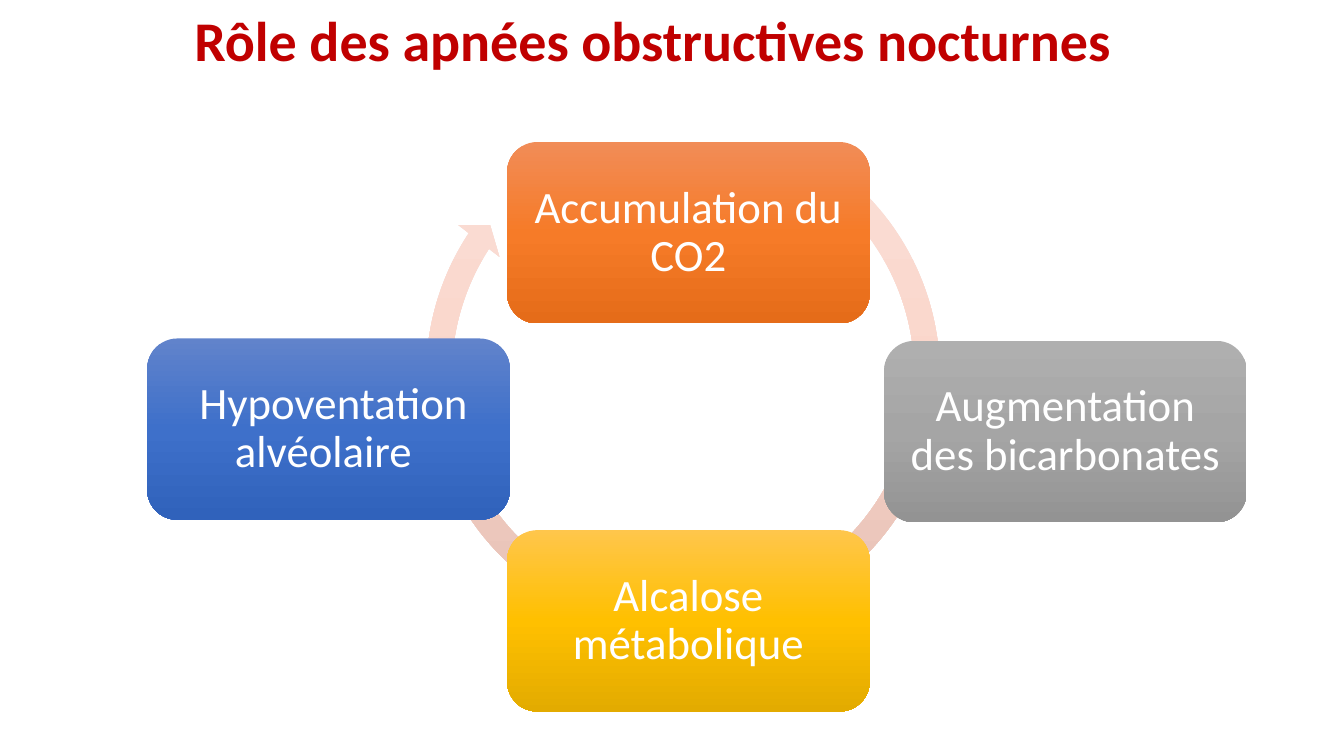
import copy

from pptx import Presentation
from pptx import util as u
from pptx.dml.color import RGBColor
from pptx.enum import shapes, text
from pptx.oxml.ns import qn

FONT = "Calibri"
COLORS = {
    "title": "C00000",
    "label": "FFFFFF",
    "arrow": ("FAE0D8", "FAD6CB", "E2BCB1"),
    "orange": ("F18C57", "F67B28", "E56C19"),
    "grey": ("AFAFAF", "A5A5A5", "939393"),
    "yellow": ("FFC64B", "FFC000", "E3AB00"),
    "blue": ("6183CB", "3E70CA", "3062BB"),
}
CARD_WIDTH, CARD_HEIGHT = 9.14, 4.57

# Label, colour, and offset in cm from the corner of the cycle's box
STAGES = [
    ("Accumulation du CO2", "orange", 9.07, 0),
    ("Augmentation des bicarbonates", "grey", 18.57, 5.01),
    ("Alcalose métabolique", "yellow", 9.07, 9.78),
    (" Hypoventation alvéolaire ", "blue", 0, 4.95),
]


def format_text(paragraph, size, color, bold=False):
    for run in paragraph.runs:
        run.font.name = FONT
        run.font.size = u.Pt(size)
        run.font.bold = bold
        run.font.color.rgb = RGBColor.from_string(color)


def shade(shape, colors):
    """Fill from top to bottom with three evenly spaced colours."""
    shape.shadow.inherit = False
    shape.line.fill.background()
    shape.fill.gradient()
    shape.fill.gradient_angle = 270
    stop_list = shape._element.spPr.find(qn("a:gradFill")).find(qn("a:gsLst"))
    stop_list.append(copy.deepcopy(stop_list[0]))
    for i, stop in enumerate(shape.fill.gradient_stops):
        stop.position = i / 2
        stop.color.rgb = RGBColor.from_string(colors[i])


def add_title(slide, left, top, width, height):
    title = slide.shapes.title
    title.left, title.top = u.Cm(left), u.Cm(top)
    title.width, title.height = u.Cm(width), u.Cm(height)
    frame = title.text_frame
    frame.text = "Rôle des apnées obstructives nocturnes"
    frame.auto_size = text.MSO_AUTO_SIZE.NONE
    frame.vertical_anchor = text.MSO_ANCHOR.TOP
    frame.margin_left = u.Cm(1.93)
    frame.paragraphs[0].alignment = text.PP_ALIGN.LEFT
    format_text(frame.paragraphs[0], 40, COLORS["title"], bold=True)


def add_stage(slide, label, color, left, top):
    card = slide.shapes.add_shape(
        shapes.MSO_SHAPE.ROUNDED_RECTANGLE,
        u.Cm(left), u.Cm(top), u.Cm(CARD_WIDTH), u.Cm(CARD_HEIGHT))
    shade(card, COLORS[color])
    frame = card.text_frame
    frame.text = label
    frame.word_wrap = True
    frame.vertical_anchor = text.MSO_ANCHOR.MIDDLE
    frame.margin_left = frame.margin_right = u.Cm(0.33)
    frame.margin_top = frame.margin_bottom = u.Cm(0.33)
    paragraph = frame.paragraphs[0]
    paragraph.alignment = text.PP_ALIGN.CENTER
    paragraph.line_spacing = 0.9
    format_text(paragraph, 32, COLORS["label"])


def add_cycle(slide, left, top):
    # Circular arrow behind the cards
    arrow = slide.shapes.add_shape(
        shapes.MSO_SHAPE.CIRCULAR_ARROW,
        u.Cm(left + 6.7), u.Cm(top - 0.94), u.Cm(13.61), u.Cm(13.61))
    for i, value in enumerate((0.047, 2.729, 127.946, 180.561, 0.048)):
        arrow.adjustments[i] = value
    shade(arrow, COLORS["arrow"])

    # The four stages, clockwise from the top
    for label, color, dx, dy in STAGES:
        add_stage(slide, label, color, left + dx, top + dy)


def main():
    prs = Presentation()
    prs.slide_width, prs.slide_height = u.Cm(33.87), u.Cm(19.05)
    slide = prs.slides.add_slide(prs.slide_layouts[5])
    add_title(slide, 2.97, 0, 28.09, 1.96)
    add_cycle(slide, 3.71, 3.58)
    prs.save("out.pptx")


if __name__ == "__main__":
    main()
